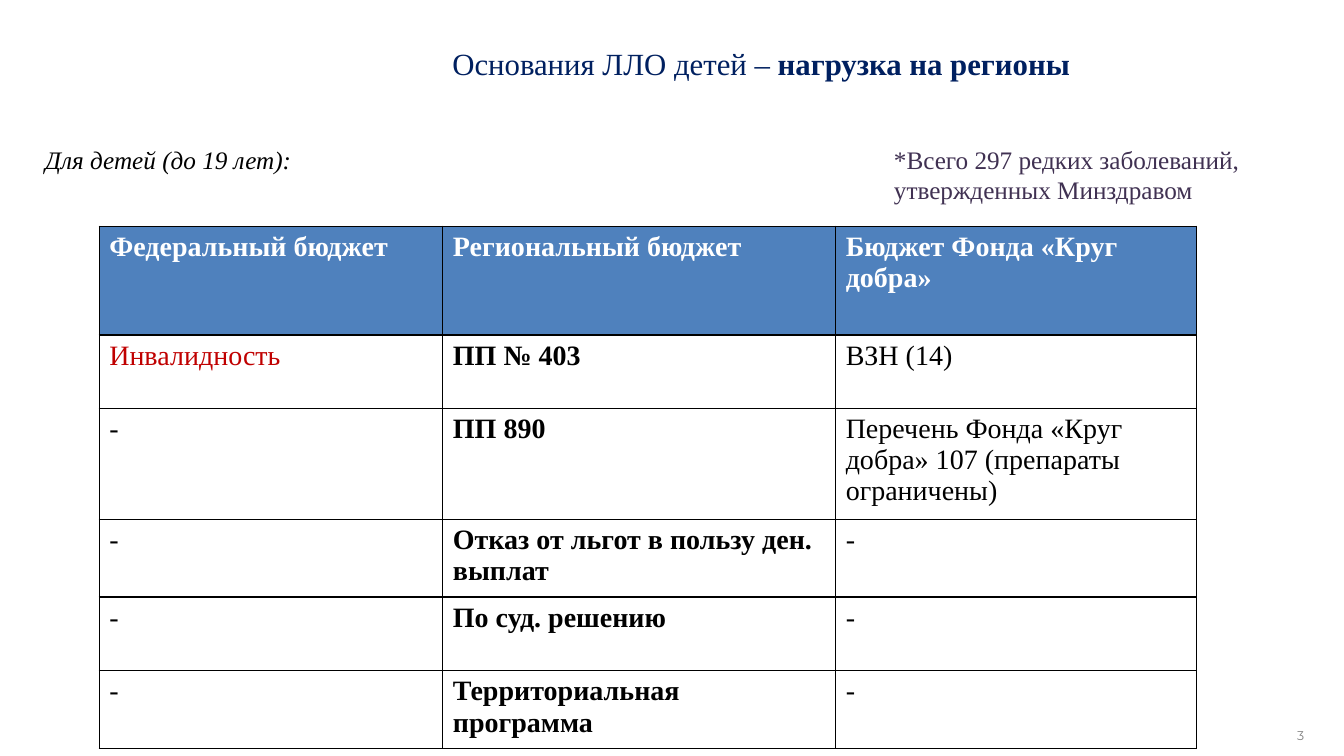
from lxml.etree import SubElement
from pptx import Presentation
from pptx.dml.color import RGBColor
from pptx.enum.text import MSO_ANCHOR as Anchor, PP_ALIGN as Align
from pptx.oxml.ns import qn
from pptx.util import Cm, Pt

NAVY, PLUM, RED = "002060", "403152", "C00000"
BLACK, WHITE, GRAY, BLUE = "000000", "FFFFFF", "808080", "4F81BD"

HEADERS = ["Федеральный бюджет", "Региональный бюджет", "Бюджет Фонда «Круг добра»"]
GROUNDS = [
    ["Инвалидность", "ПП № 403", "ВЗН (14)"],
    ["-", "ПП 890", "Перечень Фонда «Круг добра» 107 (препараты ограничены)"],
    ["-", "Отказ от льгот в пользу ден. выплат", "-"],
    ["-", "По суд. решению", "-"],
    ["-", "Территориальная программа", "-"],
]
REGIONAL_COLUMN = 1


def color(value):
    return RGBColor.from_string(value)


class SlideBuilder:
    """Holds the text style and the slide being filled."""

    font = "Times New Roman"
    border_width = Pt(1)

    def __init__(self, slide):
        self.slide = slide

    def run(self, paragraph, text, size, fill, bold=False, italic=False, font=None):
        run = paragraph.add_run()
        run.text = text
        run.font.name = font or self.font
        run.font.size = Pt(size)
        run.font.color.rgb = color(fill)
        run.font.bold = bold
        run.font.italic = italic

    def text(self, box, align=Align.LEFT, anchor=Anchor.TOP):
        """Add a text box and return its paragraph, ready for runs."""
        shape = self.slide.shapes.add_textbox(*(Cm(length) for length in box))
        frame = shape.text_frame
        frame.word_wrap = True
        frame.vertical_anchor = anchor
        paragraph = frame.paragraphs[0]
        paragraph.alignment = align
        return paragraph

    def borders(self, cell):
        properties = cell._tc.get_or_add_tcPr()
        for index, side in enumerate(("a:lnL", "a:lnR", "a:lnT", "a:lnB")):
            line = SubElement(properties, qn(side), w=str(self.border_width))
            fill = SubElement(line, qn("a:solidFill"))
            SubElement(fill, qn("a:srgbClr"), val=BLACK)
            properties.insert(index, line)

    def cell(self, cell, text, fill, text_color, bold):
        cell.fill.solid()
        cell.fill.fore_color.rgb = color(fill)
        self.borders(cell)
        self.run(cell.text_frame.paragraphs[0], text, 20, text_color, bold)

    def table(self, left, top, widths, heights):
        frame = self.slide.shapes.add_table(
            len(heights), len(widths), Cm(left), Cm(top), Cm(sum(widths)), Cm(sum(heights)))
        table = frame.table
        for column, width in zip(table.columns, widths):
            column.width = Cm(width)
        for row, height in zip(table.rows, heights):
            row.height = Cm(height)
        return table


def main():
    presentation = Presentation()
    presentation.slide_width, presentation.slide_height = Cm(33.87), Cm(19.05)
    slide = presentation.slides.add_slide(presentation.slide_layouts[6])
    builder = SlideBuilder(slide)

    # Slide number
    number = builder.text((30.86, 18.03, 2.26, 1.02), Align.RIGHT, Anchor.MIDDLE)
    builder.run(number, "3", 9, GRAY, font="Montserrat")

    # Title
    title = builder.text((6.38, 0.99, 25.6, 1.2), Align.CENTER)
    builder.run(title, "Основания ЛЛО детей – ", 22, NAVY)
    builder.run(title, "нагрузка на регионы", 22, NAVY, bold=True)

    # Remarks above the table
    remark = builder.text((22.28, 3.5, 10.69, 1.8))
    builder.run(remark, "*Всего 297 редких заболеваний, утвержденных Минздравом", 18, PLUM)
    audience = builder.text((0.89, 3.5, 7.49, 1.02))
    builder.run(audience, "Для детей (до 19 лет):", 18, BLACK, italic=True)

    # Table of grounds by budget
    table = builder.table(2.5, 5.7, [8.66, 9.9, 9.09], [2.74] + [1.86] * len(GROUNDS))
    for column, header in enumerate(HEADERS):
        builder.cell(table.cell(0, column), header, BLUE, WHITE, bold=True)
    for row, grounds in enumerate(GROUNDS, start=1):
        for column, ground in enumerate(grounds):
            text_color = RED if ground == "Инвалидность" else BLACK
            builder.cell(table.cell(row, column), ground, WHITE, text_color,
                         bold=column == REGIONAL_COLUMN)

    presentation.save("out.pptx")


if __name__ == "__main__":
    main()
